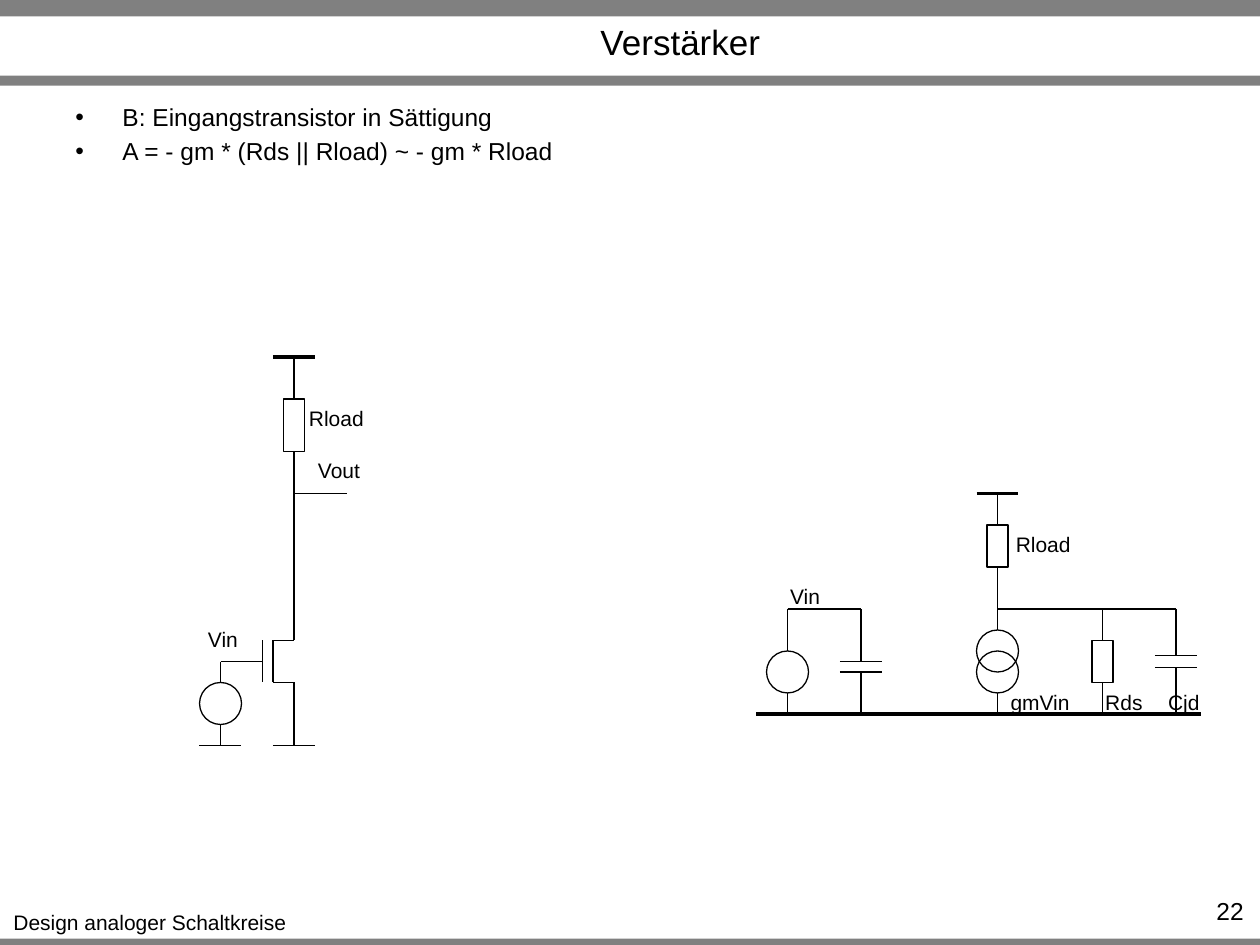
from lxml import etree
from pptx import Presentation
from pptx import util as u
from pptx.dml.color import RGBColor
from pptx.enum import shapes, text
from pptx.oxml.ns import qn

INCH = 2.54
GRID = INCH / 12  # circuit grid step in cm
BLACK, GREY = "000000", "808080"
LEFT, MID, RIGHT = text.PP_ALIGN.LEFT, text.PP_ALIGN.CENTER, text.PP_ALIGN.RIGHT
RECT, OVAL = shapes.MSO_SHAPE.RECTANGLE, shapes.MSO_SHAPE.OVAL


def color(code):
    return RGBColor.from_string(code)


def inches(*vals):
    return [u.Cm(v * INCH) for v in vals]


def cells(*vals):
    return [u.Cm(v * GRID) for v in vals]


def bullet(para):
    props = para._p.get_or_add_pPr()
    props.set("marL", str(u.Cm(0.95)))
    props.set("indent", str(u.Cm(-0.95)))
    etree.SubElement(props, qn("a:buFont")).set("typeface", "Arial")
    etree.SubElement(props, qn("a:buChar")).set("char", "•")


def write(slide, words, box, size=12, align=MID, wrap=True,
          anchor=text.MSO_ANCHOR.TOP, dots=False):
    frame = slide.shapes.add_textbox(*inches(*box)).text_frame
    frame.word_wrap = wrap
    frame.vertical_anchor = anchor
    for i, line in enumerate(words.split("\n")):
        para = frame.paragraphs[0] if i == 0 else frame.add_paragraph()
        para.text = line
        para.alignment = align
        if dots:
            bullet(para)
        if i:
            para.space_before = u.Pt(size * 0.2)
        for run in para.runs:
            run.font.name = "Arial"
            run.font.size = u.Pt(size)
            run.font.color.rgb = color(BLACK)


def bar(slide, top, height):
    item = slide.shapes.add_shape(RECT, *inches(0, top, 10, height))
    item.shadow.inherit = False
    item.fill.solid()
    item.fill.fore_color.rgb = color(GREY)
    item.line.fill.background()


def outline(slide, kind, left, top, wide, high):
    item = slide.shapes.add_shape(kind, *cells(left, top, wide, high))
    item.shadow.inherit = False
    item.fill.background()
    item.line.color.rgb = color(BLACK)
    item.line.width = u.Pt(0.75)


def wire(slide, *points, width=0.75):
    for start, end in zip(points, points[1:]):
        item = slide.shapes.add_connector(
            shapes.MSO_CONNECTOR.STRAIGHT, *cells(*start, *end))
        item.line.color.rgb = color(BLACK)
        item.line.width = u.Pt(width)
        etree.SubElement(item._element.spPr, qn("a:effectLst"))


def plate(slide, x, y, width=0.75):
    wire(slide, (x - 2, y), (x + 2, y), width=width)


def load(slide, x, top, end, start, high):
    """Resistor of given start and height in a wire from top to end."""
    wire(slide, (x, top), (x, start))
    outline(slide, RECT, x - 1, start, 2, high)
    wire(slide, (x, start + high), (x, end))


def source(slide, x, top, end, start, rings=1):
    """Source of one or two rings in a wire from top to end."""
    wire(slide, (x, top), (x, start))
    for i in range(rings):
        outline(slide, OVAL, x - 2, start + 2 * i, 4, 4)
    wire(slide, (x, start + 2 + 2 * rings), (x, end))


def cap(slide, x, top, end, upper, lower):
    wire(slide, (x, top), (x, upper))
    plate(slide, x, upper)
    plate(slide, x, lower)
    wire(slide, (x, lower), (x, end))


def stage(slide):
    # Supply, load and output
    plate(slide, 28, 34, width=1.75)
    load(slide, 28, 34, 47, 38, 5)
    wire(slide, (28, 47), (33, 47))
    # Transistor
    wire(slide, (28, 47), (28, 61), (26, 61), (26, 65), (28, 65), (28, 71))
    wire(slide, (25, 61), (25, 65))
    wire(slide, (21, 63), (25, 63))
    plate(slide, 28, 71)
    # Input source
    source(slide, 21, 63, 71, 65)
    plate(slide, 21, 71)


def model(slide):
    # Ground rail
    wire(slide, (72, 68), (114.4, 68), width=1.75)
    # Input side
    wire(slide, (75, 58), (82, 58))
    source(slide, 75, 58, 68, 62)
    cap(slide, 82, 58, 68, 63, 64)
    # Output side
    plate(slide, 95, 47, width=1.75)
    load(slide, 95, 47, 58, 50, 4)
    wire(slide, (95, 58), (112, 58))
    source(slide, 95, 58, 68, 60, rings=2)
    load(slide, 105, 58, 68, 61, 4)
    cap(slide, 112, 58, 68, 62.4, 63.6)


def main():
    deck = Presentation()
    deck.slide_width, deck.slide_height = inches(10, 7.5)
    slide = deck.slides.add_slide(deck.slide_layouts[6])

    # Frame of the page
    for top, high in ((7.45, 0.05), (0, 0.13), (0.6, 0.08)):
        bar(slide, top, high)
    write(slide, "Design analoger Schaltkreise", (0, 7.17, 2.38, 0.3), wrap=False)
    write(slide, "22", (9.1, 7.06, 0.87, 0.24), size=14, align=RIGHT)

    # Title and points
    write(slide, "Verstärker", (1.3, 0.14, 8.2, 0.38), size=20,
          anchor=text.MSO_ANCHOR.MIDDLE)
    write(slide, "B: Eingangstransistor in Sättigung\n"
          "A = - gm * (Rds || Rload) ~ - gm * Rload",
          (0.5, 0.76, 9, 0.91), size=14, align=LEFT, dots=True)

    # Circuits
    stage(slide)
    model(slide)

    # Labels
    for name, left, top, wide in (
            ("Rload", 2.35, 3.17, 0.64), ("Vout", 2.42, 3.58, 0.54),
            ("Vin", 1.55, 4.92, 0.44), ("Vin", 6.17, 4.58, 0.44),
            ("Rload", 7.96, 4.17, 0.64), ("gmVin", 7.92, 5.42, 0.67),
            ("Rds", 8.67, 5.42, 0.5), ("Cjd", 9.17, 5.42, 0.45)):
        write(slide, name, (left, top, wide, 0.3), wrap=False)

    deck.save("out.pptx")


if __name__ == "__main__":
    main()
